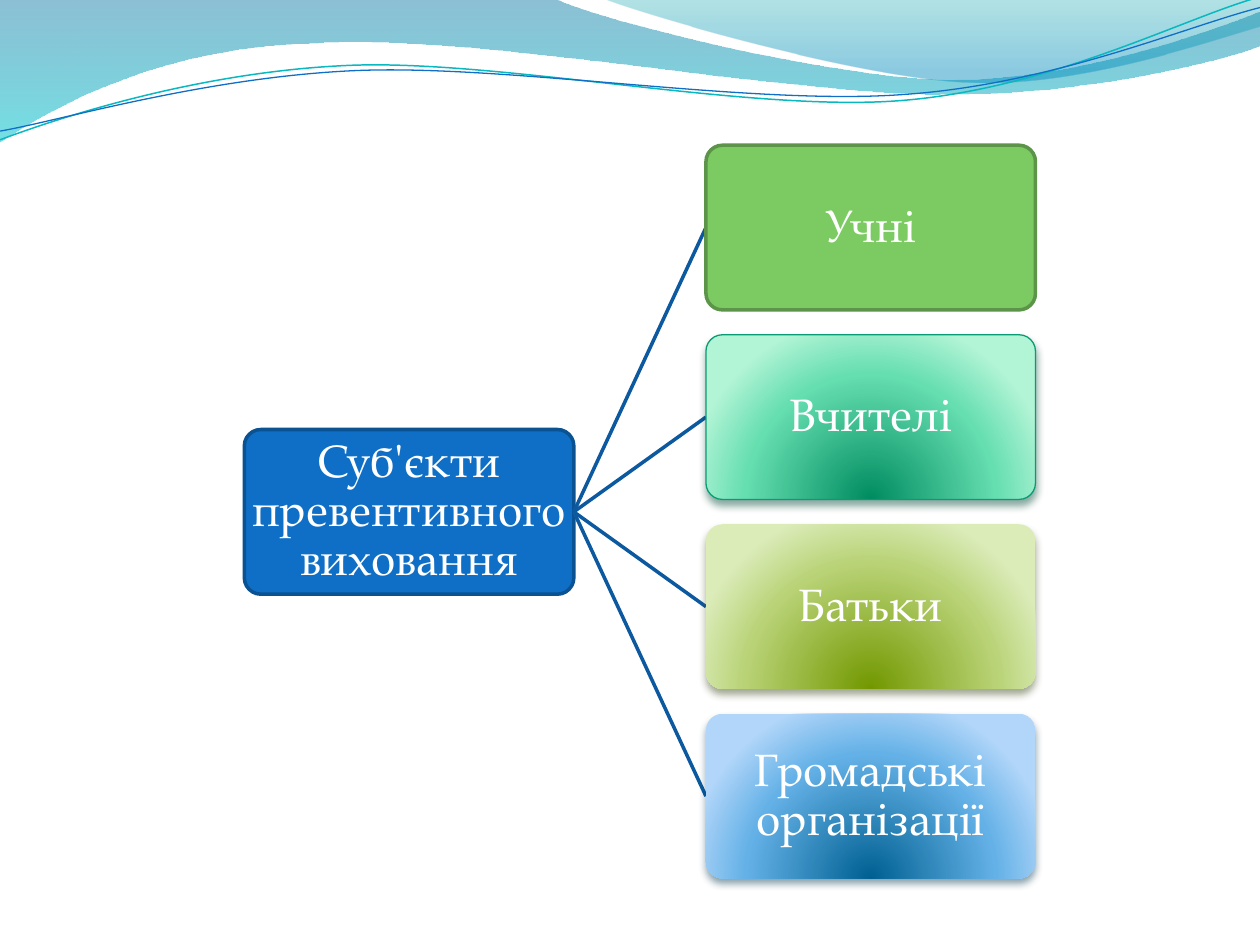
from dataclasses import dataclass

from lxml import etree
from pptx import Presentation
from pptx import util as u
from pptx.dml.color import RGBColor
from pptx.enum import shapes, text
from pptx.oxml.ns import qn

Point = tuple[float, float]
Stop = tuple[int, str, int]  # position %, colour key, opacity %

COLORS = {
    "white": "FFFFFF", "link": "0C599F",
    "wave_blue": "0074A1", "wave_cyan": "00C6CF",
    "crest_teal": "00A1A9", "crest_blue": "008BBF",
    "line_teal": "0AB8BF", "blue": "0F6FC6", "blue_edge": "0B5292",
    "green": "7CCA62", "green_edge": "5C9549",
    "mint_dark": "008C60", "mint": "65DEB0", "mint_light": "B2F4D6",
    "mint_edge": "0A9B74", "mint_shadow": "044A37",
    "olive_dark": "729800", "olive": "B8D275", "olive_light": "DBECB9",
    "olive_shadow": "3A4519",
    "sky_dark": "006091", "sky": "64B1E7", "sky_light": "B1D6F9",
    "sky_shadow": "00374C",
}
FONT = "TeX Gyre Pagella"
BOX_W, BOX_H, PITCH = 188.3, 94.1, 108.3
ROOT_X, BRANCH_X, BRANCH_Y = 139.6, 403.4, 83


@dataclass
class Wave:
    """A start point, then line ends (1 point) or cubic curves (3 points)."""
    start: Point
    segments: list[tuple[Point, ...]]
    stops: tuple[Stop, ...] = ()
    line: str = ""
    weight: float = 0


@dataclass
class Box:
    label: str
    fill: tuple[str, ...]  # one colour, or dark, middle and light
    line: str = ""
    weight: float = 0
    shadow: str = ""


WAVES = [
    Wave((0, 0), [
        ((317, -0.7),),
        ((343, 12), (478, 45.4), (546, 45.4)),
        ((614, 45.4), (690, 18.7), (720, 6.5)),
        ((720.7, 26),),
        ((708, 31.7), (626, 54.7), (537, 54)),
        ((448, 54), (275, 20.2), (185, 24.5)),
        ((93, 26), (33, 59.8), (-0.7, 81.4)),
    ], stops=((0, "wave_blue", 45), (100, "wave_cyan", 55))),
    Wave((345, -0.7), [
        ((366, 8), (491, 44.6), (554, 46.8)),
        ((616, 49.7), (692, 23), (720, 15)),
        ((720, 0),),
    ], stops=((0, "crest_teal", 30), (80, "crest_blue", 45))),
    Wave((0, 79.9), [
        ((34.6, 67), (113.8, 41), (199.4, 37.4)),
        ((284.4, 33.8), (427, 64.1), (513.4, 57.6)),
        ((599.8, 51.1), (675.4, 10.8), (718.6, -1.4)),
    ], line="line_teal", weight=0.85),
    Wave((0, 74.9), [
        ((33.8, 69.1), (118.1, 43.9), (203.8, 40.3)),
        ((290.2, 36.7), (429.8, 60.5), (516.2, 54)),
        ((601.9, 48.2), (677.5, 15.1), (720, 4.3)),
    ], line="blue", weight=0.75),
]
ROOT = Box("Суб'єкти превентивного виховання", ("blue",), "blue_edge", 2)
BRANCHES = [
    Box("Учні", ("green",), "green_edge", 2),
    Box("Вчителі", ("mint_dark", "mint", "mint_light"), "mint_edge", 0.75, "mint_shadow"),
    Box("Батьки", ("olive_dark", "olive", "olive_light"), shadow="olive_shadow"),
    Box("Громадські організації", ("sky_dark", "sky", "sky_light"), shadow="sky_shadow"),
]


def rgb(name: str) -> RGBColor:
    return RGBColor.from_string(COLORS[name])


def child(parent, tag: str, **attrs):
    return etree.SubElement(parent, qn(tag), {k: str(v) for k, v in attrs.items()})


def add_color(parent, name: str, opacity: int) -> None:
    clr = child(parent, "a:srgbClr", val=COLORS[name])
    if opacity < 100:
        child(clr, "a:alpha", val=opacity * 1000)


def set_gradient(sp, stops: tuple[Stop, ...], radial: bool) -> None:
    """Fill downwards, or in circles around a point below the shape."""
    sp.fill.gradient()
    grad = sp._element.spPr.find(qn("a:gradFill"))
    for old in list(grad):
        grad.remove(old)
    gs_list = child(grad, "a:gsLst")
    for pos, name, opacity in stops:
        add_color(child(gs_list, "a:gs", pos=pos * 1000), name, opacity)
    if radial:
        circle = child(grad, "a:path", path="circle")
        child(circle, "a:fillToRect", l=50000, t=130000, r=50000, b=-30000)
    else:
        child(grad, "a:lin", ang=5400000, scaled=0)


def set_line(sp, name: str, weight: float) -> None:
    if name:
        sp.line.color.rgb = rgb(name)
        sp.line.width = u.Pt(weight)
    else:
        sp.line.fill.background()


def bend_segments(sp, segments: list[tuple[Point, ...]]) -> None:
    """Join the three straight steps of each cubic segment into one curve."""
    outline = sp._element.spPr.find(".//" + qn("a:path"))
    steps = iter(list(outline)[1:])
    for seg in segments:
        parts = [next(steps) for _ in seg]
        if len(parts) == 3:
            curve = etree.Element(qn("a:cubicBezTo"))
            parts[0].addprevious(curve)
            for part in parts:
                curve.append(part[0])
                outline.remove(part)


def draw_wave(s, wave: Wave) -> None:
    points = [wave.start] + [pt for seg in wave.segments for pt in seg]
    emu = [(u.Pt(x), u.Pt(y)) for x, y in points]
    builder = s.shapes.build_freeform(*emu[0])
    builder.add_line_segments(emu[1:], close=bool(wave.stops))
    sp = builder.convert_to_shape()
    bend_segments(sp, wave.segments)
    sp.shadow.inherit = False
    if wave.stops:
        set_gradient(sp, wave.stops, radial=False)
    else:
        sp.fill.background()
    set_line(sp, wave.line, wave.weight)


def draw_box(s, box: Box, x: float, y: float) -> None:
    sp = s.shapes.add_shape(shapes.MSO_SHAPE.ROUNDED_RECTANGLE,
                            u.Pt(x), u.Pt(y), u.Pt(BOX_W), u.Pt(BOX_H))
    sp.adjustments[0] = 0.1
    if len(box.fill) == 1:
        sp.fill.solid()
        sp.fill.fore_color.rgb = rgb(box.fill[0])
    else:
        set_gradient(sp, tuple((pos, name, 100) for pos, name
                               in zip((0, 68, 100), box.fill)), radial=True)
    set_line(sp, box.line, box.weight)
    sp.shadow.inherit = False
    if box.shadow:
        effects = sp._element.spPr.find(qn("a:effectLst"))
        shadow = child(effects, "a:outerShdw", blurRad=u.Pt(4.5), dist=u.Pt(3),
                       dir=5400000, rotWithShape=0)
        add_color(shadow, box.shadow, 48)
    tf = sp.text_frame
    tf.word_wrap = True
    tf.vertical_anchor = text.MSO_ANCHOR.MIDDLE
    tf.margin_left = tf.margin_right = tf.margin_top = tf.margin_bottom = u.Pt(1.3)
    p = tf.paragraphs[0]
    p.alignment = text.PP_ALIGN.CENTER
    p.line_spacing = 0.9
    r = p.add_run()
    r.text = box.label
    r.font.name, r.font.size = FONT, u.Pt(26)
    r.font.color.rgb = rgb("white")


def draw_link(s, start: Point, end: Point) -> None:
    cxn = s.shapes.add_connector(shapes.MSO_CONNECTOR.STRAIGHT,
                                 *(u.Pt(v) for v in start + end))
    set_line(cxn, "link", 2)
    child(cxn._element.spPr, "a:effectLst")


def main() -> None:
    prs = Presentation()
    prs.slide_width, prs.slide_height = u.Pt(720), u.Pt(540)
    s = prs.slides.add_slide(prs.slide_layouts[6])
    for wave in WAVES:
        draw_wave(s, wave)
    root_y = BRANCH_Y + PITCH * (len(BRANCHES) - 1) / 2
    draw_box(s, ROOT, ROOT_X, root_y)
    for i, box in enumerate(BRANCHES):
        y = BRANCH_Y + i * PITCH
        draw_link(s, (ROOT_X + BOX_W, root_y + BOX_H / 2), (BRANCH_X, y + BOX_H / 2))
        draw_box(s, box, BRANCH_X, y)
    prs.save("out.pptx")


if __name__ == "__main__":
    main()
